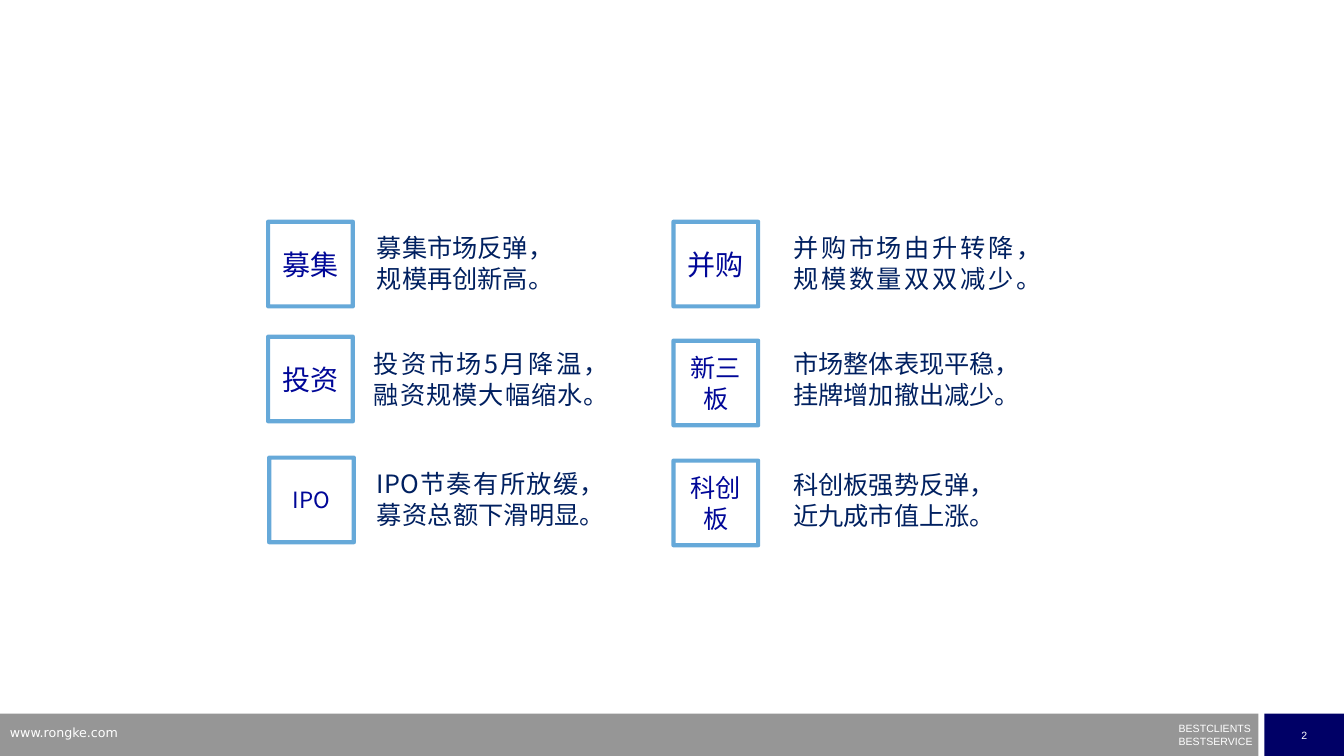
import pptx
import pptx.util
import pptx.dml.color
import pptx.enum.shapes
import pptx.enum.text
import pptx.oxml.ns
from lxml import etree

PX = 9144  # 100 px to the inch
CJK = "Noto Sans CJK SC"
ALIGN = pptx.enum.text.PP_ALIGN
TILE = 84

# tile left, top, label, label size, text left, top, width, paragraphs
TOPICS = [
    (266, 220, "募集", 20, 364, 226, 228, ["募集市场反弹，", "规模再创新高。"]),
    (266, 334, "投资", 20, 361, 341, 228, ["投资市场5月降温，融资规模大幅缩水。"]),
    (267, 454, "IPO", 16, 364, 460, 221, ["IPO节奏有所放缓，", "募资总额下滑明显。"]),
    (668, 220, "并购", 20, 777, 226, 241, ["并购市场由升转降，", "规模数量双双减少。"]),
    (668, 338, "新三板", 18, 777, 341, 253, ["市场整体表现平稳，", "挂牌增加撤出减少。"]),
    (668, 457, "科创板", 18, 777, 461, 252, ["科创板强势反弹，", "近九成市值上涨。"]),
]


def px(*lengths):
    return [pptx.util.Emu(length * PX) for length in lengths]


def rgb(value):
    return pptx.dml.color.RGBColor.from_string(value)


def write(shape, lines, size, font, color, align):
    """Fill a shape with one paragraph per line."""
    frame = shape.text_frame
    frame.text = "\n".join(lines)
    for para in frame.paragraphs:
        para.alignment = align
        para.font.size = pptx.util.Pt(size)
        para.font.name = font
        para.font.color.rgb = rgb(color)
        properties = para.font.fill._xPr
        east_asian = etree.SubElement(properties, pptx.oxml.ns.qn("a:ea"))
        east_asian.set("typeface", font)
    return frame


def add_rect(page, box, fill=None):
    shape = page.shapes.add_shape(pptx.enum.shapes.MSO_SHAPE.RECTANGLE, *px(*box))
    shape.shadow.inherit = False
    shape.line.fill.background()
    if fill:
        shape.fill.solid()
        shape.fill.fore_color.rgb = rgb(fill)
    else:
        shape.fill.background()
    shape.text_frame.vertical_anchor = pptx.enum.text.MSO_ANCHOR.MIDDLE
    return shape


def add_text(page, box, lines, size, font, color, align=ALIGN.LEFT):
    shape = page.shapes.add_textbox(*px(*box))
    frame = write(shape, lines, size, font, color, align)
    frame.word_wrap = True
    return frame


def add_tile(page, left, top, label, size):
    tile = add_rect(page, (left, top, TILE, TILE))
    tile.line.width = pptx.util.Pt(3)
    tile.line.color.rgb = rgb("0070C0")
    color = tile.line.fill._xPr.find(".//" + pptx.oxml.ns.qn("a:srgbClr"))
    etree.SubElement(color, pptx.oxml.ns.qn("a:alpha")).set("val", "60000")
    write(tile, [label], size, CJK, "000798", ALIGN.CENTER)


def add_topic(page, left, top, label, size, text_left, text_top, width, lines):
    add_tile(page, left, top, label, size)
    frame = add_text(page, (text_left, text_top, width, 71), lines, 18, CJK,
                     "002060", ALIGN.JUSTIFY)
    frame.auto_size = pptx.enum.text.MSO_AUTO_SIZE.SHAPE_TO_FIT_TEXT


def add_footer(page, left, top, width, height):
    number_width = 79
    add_rect(page, (left, top, width - number_width - 6, height), "969696")
    number = add_rect(page, (left + width - number_width, top, number_width, height),
                      "000066")
    write(number, ["2"], 7.5, "Arial", "FFFFFF", ALIGN.CENTER).word_wrap = False

    motto = add_text(page, (left + 1169, top + 14, 76, 20),
                     ["BESTCLIENTS", "BESTSERVICE"], 7.5, "Arial", "FFFFFF")
    motto.margin_left = motto.margin_right = motto.margin_top = motto.margin_bottom = 0
    for para in motto.paragraphs:
        para.line_spacing = 0.5
    motto.paragraphs[1].space_before = pptx.util.Pt(4.3)
    add_text(page, (left, top + 6, 320, 26), ["www.rongke.com"], 9,
             "DejaVu Sans", "FFFFFF")


def main():
    deck = pptx.Presentation()
    deck.slide_width, deck.slide_height = px(1333, 750)
    page = deck.slides.add_slide(deck.slide_layouts[6])
    add_footer(page, 0, 708, 1333, 42)
    for topic in TOPICS:
        add_topic(page, *topic)
    deck.save("out.pptx")


if __name__ == "__main__":
    main()
